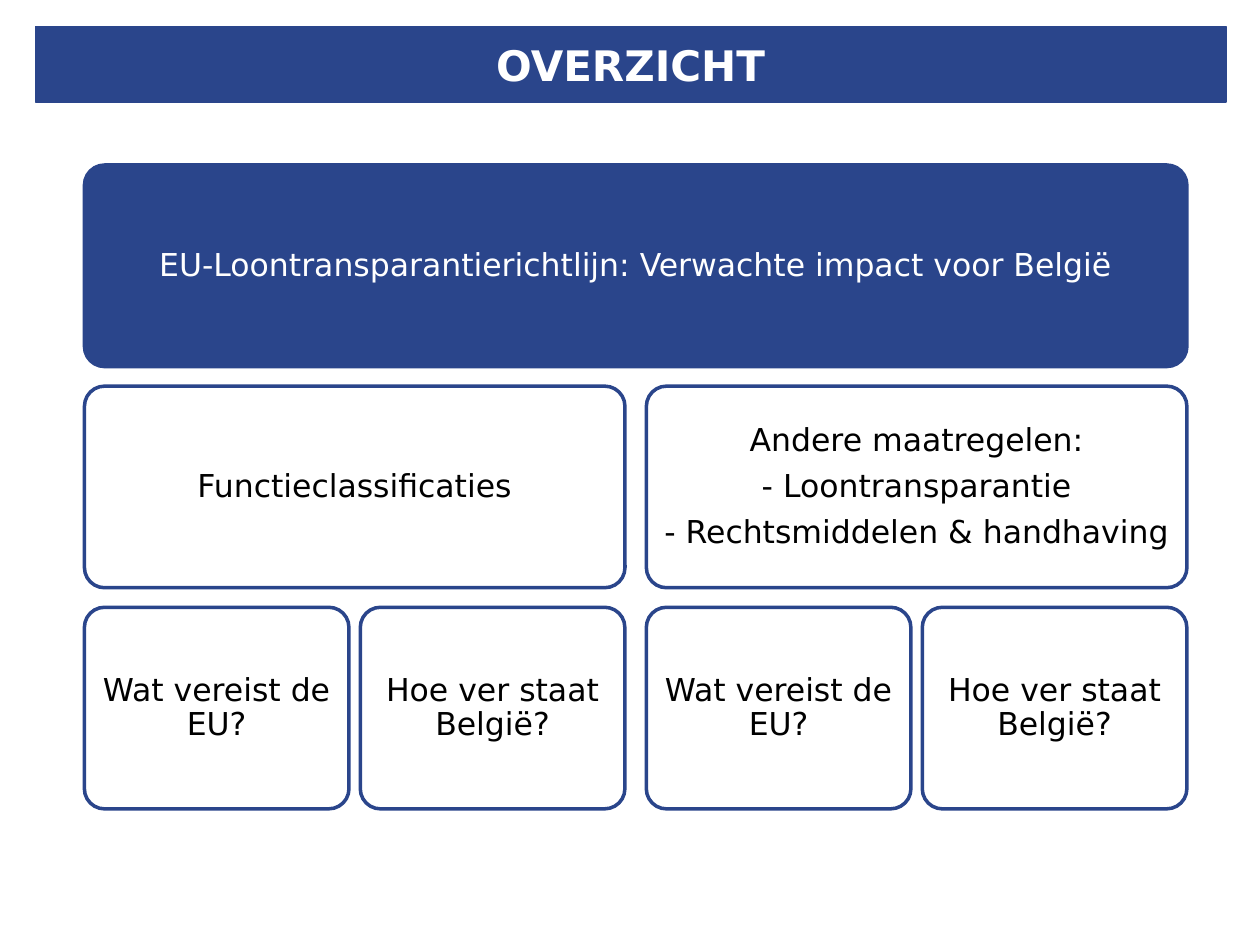
from pptx import Presentation
from pptx import util as u
from pptx.dml.color import RGBColor
from pptx.enum import shapes, text

COLORS = {"blue": "2A458B", "white": "FFFFFF", "black": "000000"}
FONT = "DejaVu Sans"

# Grid: two halves, each of two columns, over three rows
LEFT, TOP = 0.67, 1.31
HALF_PITCH, COLUMN_PITCH, ROW_PITCH = 4.46, 2.19, 1.755
COLUMN_WIDTH, ROW_HEIGHT = 2.1, 1.6
HALF_WIDTH = COLUMN_PITCH + COLUMN_WIDTH
FULL_WIDTH = HALF_PITCH + HALF_WIDTH


def paint(panel, fill, line_width):
    panel.fill.solid()
    panel.fill.fore_color.rgb = RGBColor.from_string(COLORS[fill])
    panel.line.color.rgb = RGBColor.from_string(COLORS["blue"])
    panel.line.width = u.Pt(line_width)


def write(panel, lines, size, color, bold=False):
    frame = panel.text_frame
    frame.text = "\n".join(lines)
    frame.word_wrap = True
    frame.auto_size = text.MSO_AUTO_SIZE.NONE
    frame.vertical_anchor = text.MSO_ANCHOR.MIDDLE
    for paragraph in frame.paragraphs:
        paragraph.alignment = text.PP_ALIGN.CENTER
        paragraph.font.name = FONT
        paragraph.font.size = u.Pt(size)
        paragraph.font.bold = bold
        paragraph.font.color.rgb = RGBColor.from_string(COLORS[color])


prs = Presentation()
prs.slide_width, prs.slide_height = u.Inches(10), u.Inches(7.5)
slide = prs.slides.add_slide(prs.slide_layouts[5])

# Title bar
title = slide.shapes.title
title.left, title.top = u.Inches(0.28), u.Inches(0.21)
title.width, title.height = u.Inches(9.45), u.Inches(0.6)
paint(title, "blue", 0.75)
write(title, ["OVERZICHT"], 24, "white", bold=True)

# Hierarchy: the topic, its two themes, two questions for each theme
topic = ["EU-Loontransparantierichtlijn: Verwachte impact voor België"]
themes = [
    ["Functieclassificaties"],
    ["Andere maatregelen:", "- Loontransparantie", "- Rechtsmiddelen & handhaving"],
]
questions = ["Wat vereist de EU?", "Hoe ver staat België?"]

# Each block: row, offset from the left, width, lines
blocks = [(0, 0, FULL_WIDTH, topic)]
for half, theme in enumerate(themes):
    offset = half * HALF_PITCH
    blocks.append((1, offset, HALF_WIDTH, theme))
    for column, question in enumerate(questions):
        blocks.append((2, offset + column * COLUMN_PITCH, COLUMN_WIDTH, [question]))

for row, offset, width, lines in blocks:
    block = slide.shapes.add_shape(
        shapes.MSO_SHAPE.ROUNDED_RECTANGLE,
        u.Inches(LEFT + offset), u.Inches(TOP + row * ROW_PITCH),
        u.Inches(width), u.Inches(ROW_HEIGHT))
    block.adjustments[0] = 0.1
    block.shadow.inherit = False
    fill, color = ("blue", "white") if row == 0 else ("white", "black")
    paint(block, fill, 2)
    write(block, lines, 18, color)
    frame = block.text_frame
    frame.margin_left = frame.margin_right = u.Inches(0.07)
    frame.margin_top = frame.margin_bottom = u.Inches(0.07)
    for paragraph in frame.paragraphs:
        paragraph.line_spacing = 0.9
        paragraph.space_after = u.Pt(6.8)

prs.save("out.pptx")
